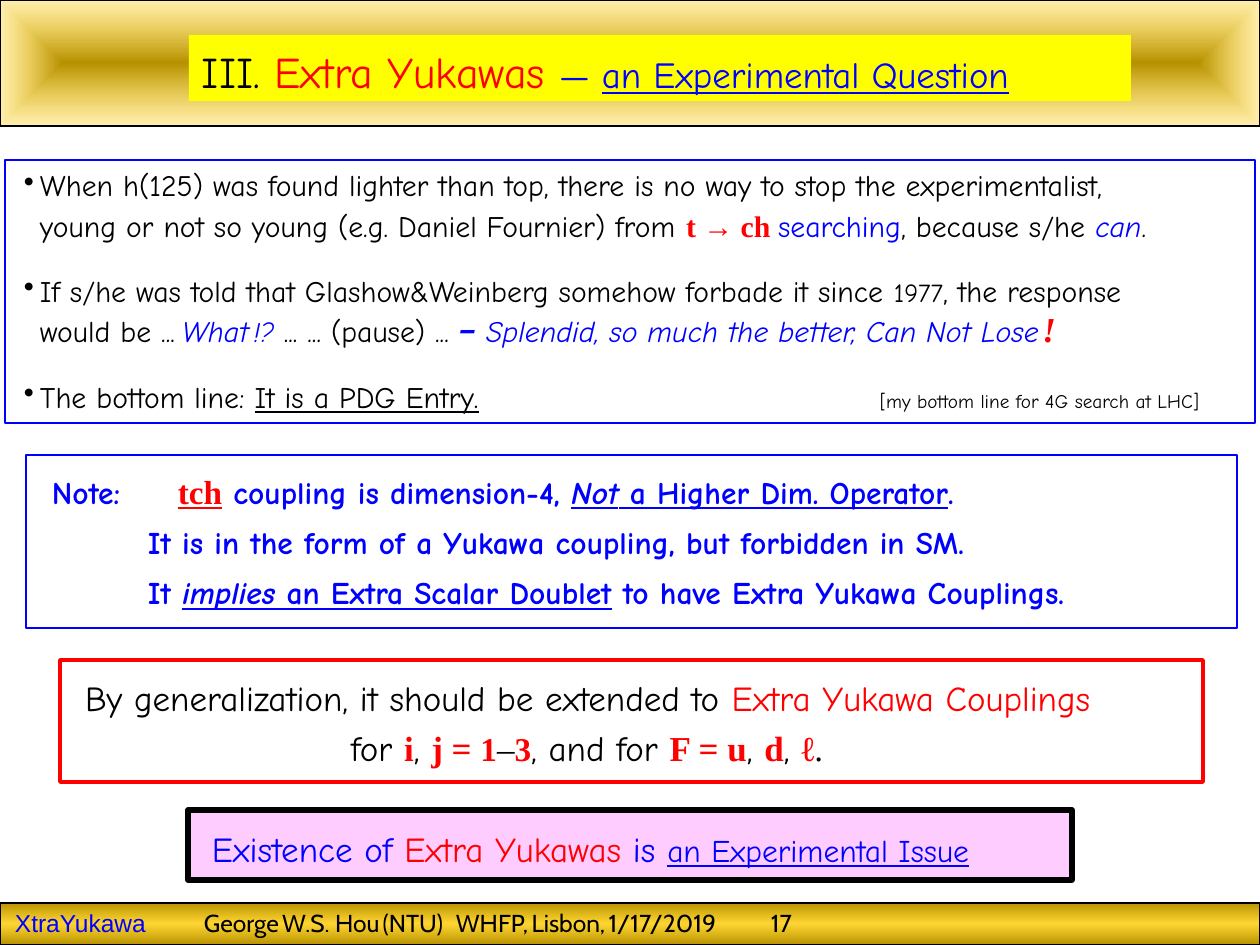
"""Build the slide on extra Yukawa couplings as an experimental question."""
import dataclasses
import typing

import lxml.etree
import pptx
import pptx.dml.color
import pptx.enum.shapes
import pptx.enum.text
import pptx.oxml
import pptx.oxml.ns
import pptx.util

COLORS = {"black": "000000", "blue": "0000FF", "red": "FF0000",
          "yellow": "FFFF00", "pink": "FFCCFF", "gold": "FFCC00"}
COMIC, TIMES, CABIN, ARIAL = "Comic Neue", "Times New Roman", "Cabin", "Arial"
ALIGN = pptx.enum.text.PP_ALIGN
ANCHOR = pptx.enum.text.MSO_ANCHOR
PX = 914400 / 126
SHADE = '<a:shade val="46275"/>'


class Run(typing.NamedTuple):
    text: str
    size: int = 17
    color: str = "black"
    name: str = COMIC
    bold: bool = False
    italic: bool = False
    underline: bool = False


@dataclasses.dataclass
class Line:
    runs: list[Run]
    margin: int = 0
    bullet: bool = False
    tabs: tuple[int, ...] = ()
    before: float = 0
    align: ALIGN = ALIGN.LEFT


@dataclasses.dataclass
class Panel:
    box: tuple[int, int, int, int]
    lines: list[Line]
    left: int = 13
    right: int = 13
    top: int = 6
    pitch: float | None = None
    fill: str | None = None
    border: str | None = None
    width: float = 1


@dataclasses.dataclass
class Band:
    box: tuple[int, int, int, int]
    stops: list[tuple[int, str]]
    direction: str


def px(length: int) -> pptx.util.Emu:
    return pptx.util.Emu(round(length * PX))


def rgb(color: str) -> pptx.dml.color.RGBColor:
    return pptx.dml.color.RGBColor.from_string(COLORS[color])


def add_box(slide, box: tuple[int, int, int, int], border: str | None, width: float):
    shape = slide.shapes.add_shape(pptx.enum.shapes.MSO_SHAPE.RECTANGLE, *map(px, box))
    shape.shadow.inherit = False
    shape.fill.background()
    if border:
        shape.line.color.rgb = rgb(border)
        shape.line.width = pptx.util.Pt(width)
    else:
        shape.line.fill.background()
    return shape


def draw_band(slide, band: Band) -> None:
    properties = add_box(slide, band.box, "black", 0.75).element.spPr
    stops = "".join(
        f'<a:gs pos="{place * 1000}"><a:srgbClr val="{COLORS["gold"]}">{change}</a:srgbClr></a:gs>'
        for place, change in band.stops)
    gradient = pptx.oxml.parse_xml(
        f'<a:gradFill {pptx.oxml.ns.nsdecls("a")} rotWithShape="1">'
        f"<a:gsLst>{stops}</a:gsLst>{band.direction}</a:gradFill>")
    properties.replace(properties.find(pptx.oxml.ns.qn("a:noFill")), gradient)


def style_runs(paragraph, runs: list[Run]) -> None:
    fonts = []
    for run in runs:
        piece = paragraph.add_run()
        piece.text = run.text
        fonts.append(piece.font)
    for field in Run._fields[1:]:
        values = [getattr(run, field) for run in runs]
        agreed = len(set(values)) == 1
        targets = [(paragraph.font, values[0])] if agreed else zip(fonts, values)
        for font, value in targets:
            if field == "color":
                font.color.rgb = rgb(value)
            elif field == "size":
                font.size = pptx.util.Pt(value)
            else:
                setattr(font, field, value)


def write_lines(frame, lines: list[Line], pitch: float | None) -> None:
    qn = pptx.oxml.ns.qn
    for index, line in enumerate(lines):
        paragraph = frame.add_paragraph() if index else frame.paragraphs[0]
        paragraph.alignment = line.align
        if pitch:
            paragraph.line_spacing = pptx.util.Pt(pitch)
        if line.before:
            paragraph.space_before = pptx.util.Pt(line.before)
        properties = paragraph._p.get_or_add_pPr()
        properties.set("marL", str(px(line.margin)))
        properties.set("indent", str(-px(line.margin) if line.bullet else 0))
        if line.bullet:
            lxml.etree.SubElement(properties, qn("a:buChar")).set("char", "•")
        if line.tabs:
            stops = lxml.etree.SubElement(properties, qn("a:tabLst"))
            for position in line.tabs:
                lxml.etree.SubElement(stops, qn("a:tab"), pos=str(px(position)), algn="l")
        style_runs(paragraph, line.runs)


def draw_panel(slide, panel: Panel) -> None:
    shape = add_box(slide, panel.box, panel.border, panel.width)
    if panel.fill:
        shape.fill.solid()
        shape.fill.fore_color.rgb = rgb(panel.fill)
    frame = shape.text_frame
    frame.word_wrap = True
    frame.vertical_anchor = ANCHOR.TOP if panel.pitch else ANCHOR.MIDDLE
    frame.margin_left, frame.margin_right = px(panel.left), px(panel.right)
    frame.margin_top, frame.margin_bottom = px(panel.top), px(0)
    write_lines(frame, panel.lines, panel.pitch)


def math_run(text: str, size: int = 20) -> Run:
    return Run(text, size, "red", TIMES, bold=True)


def note(text: str, **style: bool) -> Run:
    return Run(text, 18, "blue", bold=True, **style)


def footer(text: str, size: int = 14) -> Run:
    return Run(text, size, name=CABIN)


BANDS = [
    Band((0, 0, 1260, 126), [(0, SHADE), (100, '<a:alpha val="30000"/>')],
         '<a:path path="rect"><a:fillToRect l="50000" t="50000" r="50000" b="50000"/></a:path>'),
    Band((0, 903, 1260, 42), [(0, SHADE), (50, '<a:alpha val="80000"/>'), (100, SHADE)],
         '<a:lin ang="5400000" scaled="1"/>'),
]
THIN = footer(" ", 8)
PANELS = [
    Panel((2, 902, 1260, 42), [Line(
        [Run("XtraYukawa", 14, "blue", ARIAL), footer("\tGeorge"), THIN, footer("W.S. Hou"), THIN,
         footer("(NTU)\tWHFP,"), THIN, footer("Lisbon,"), THIN, footer("1/17/2019\t17")],
        tabs=(472, 849, 1125))], top=0),
    Panel((189, 35, 942, 66), [Line(
        [Run("III. ", 25), Run("Extra Yukawas ", 25, "red"), Run("— ", 21, "blue"),
         Run("an Experimental Question", 21, "blue", underline=True)])], fill="yellow"),
    Panel((5, 160, 1250, 263), [
        Line([Run("When h(125) was found lighter than top, there is no way to stop the experimentalist,")],
             16, bullet=True),
        Line([Run("young or not so young (e.g. Daniel Fournier) from "), math_run("t → ch ", 17),
              Run("searching", color="blue"), Run(", because s/he "),
              Run("can", color="blue", italic=True), Run(".")], 16),
        Line([Run("If s/he was told that Glashow&Weinberg somehow forbade it since "),
              Run("1977", 15), Run(", the response")], 16, bullet=True, before=13.5),
        Line([Run("would be ..."), Run(" ", 12), Run("What", color="blue", italic=True),
              Run(" ", 8, "blue", italic=True), Run("!?", 16, "blue", italic=True),
              Run(" ... ... (pause) ... "), Run("‒ ", color="blue", bold=True, italic=True),
              Run("Splendid, so much the better, Can Not Lose", color="blue", italic=True),
              Run(" ", 5, "blue", italic=True),
              Run("!", 20, "red", TIMES, bold=True, italic=True)], 16),
        Line([Run("The bottom line: "), Run("It is a PDG Entry.", underline=True),
              Run("\t[my bottom line for 4G search at LHC]", 11)],
             16, bullet=True, tabs=(856,), before=13.5),
    ], left=19, top=2, pitch=23.4, border="blue"),
    Panel((26, 455, 1211, 173), [
        Line([note("Note:\t"), Run("tch", 19, "red", TIMES, bold=True, underline=True),
              note(" coupling is dimension-4, "), note("Not", italic=True, underline=True),
              note(" a Higher Dim. Operator", underline=True), note(".")], tabs=(90,)),
        Line([note("It is in the form of a Yukawa coupling, but forbidden in SM.")], 96),
        Line([note("It "), note("implies", italic=True, underline=True),
              note(" an Extra Scalar Doublet", underline=True),
              note(" to have Extra Yukawa Couplings.")], 96),
    ], left=26, pitch=28.6, border="blue", width=1.5),
    Panel((60, 660, 1143, 122), [
        Line([Run("By generalization, it should be extended to ", 20),
              Run("Extra Yukawa Couplings", 20, "red")], 10),
        Line([Run("for ", 20), math_run("i"), Run(", ", 20), math_run("j = "), math_run("1", 19),
              Run("‒", 20, name=TIMES), math_run("3", 19), Run(", and for ", 20),
              math_run("F = u"), Run(", ", 20), math_run("d"), Run(", ", 20), math_run("ℓ"),
              Run(".", 20, name=TIMES)], align=ALIGN.CENTER),
    ], left=15, right=104, top=8, pitch=28.6, border="red", width=2.25),
    Panel((188, 810, 884, 70), [Line(
        [Run("Existence of ", 20, "blue"), Run("Extra Yukawas ", 20, "red"), Run("is ", 20, "blue"),
         Run("an Experimental Issue", 18, "blue", underline=True)])],
        left=24, fill="pink", border="black", width=3),
]


def main() -> None:
    deck = pptx.Presentation()
    deck.slide_width, deck.slide_height = px(1260), px(945)
    slide = deck.slides.add_slide(deck.slide_layouts[6])
    for band in BANDS:
        draw_band(slide, band)
    for panel in PANELS:
        draw_panel(slide, panel)
    deck.save("out.pptx")


if __name__ == "__main__":
    main()
